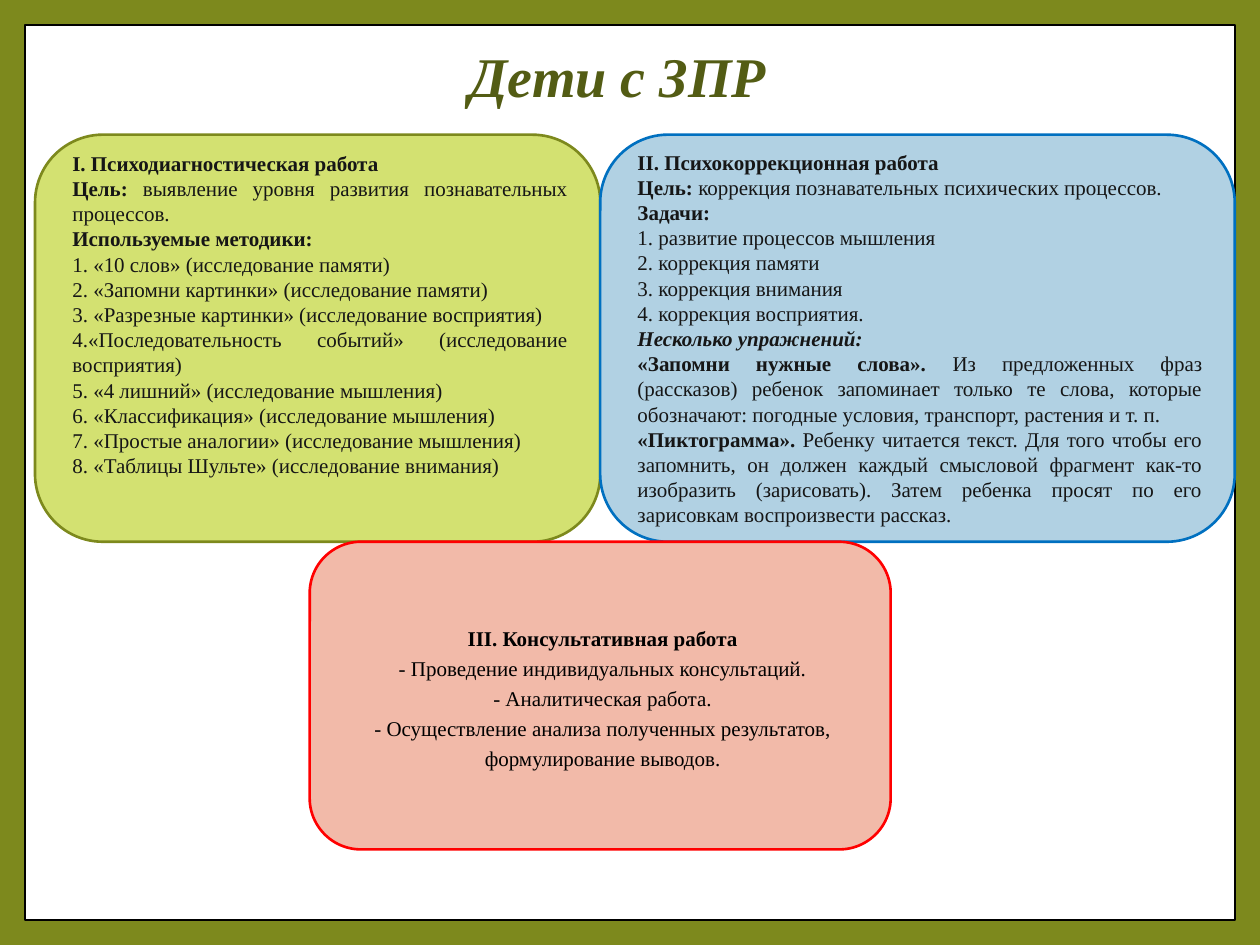
import pptx
import pptx.dml.color
import pptx.enum.shapes
import pptx.enum.text
import pptx.util

Pt = pptx.util.Pt
ALIGN = pptx.enum.text.PP_ALIGN
MIDDLE = pptx.enum.text.MSO_ANCHOR.MIDDLE
SHAPES = pptx.enum.shapes.MSO_SHAPE
BOLD = {"bold": True}
PLAIN = {"bold": False}

DIAGNOSTICS = [
    [("I. Психодиагностическая работа", BOLD)],
    [("Цель:", BOLD), (" выявление уровня развития познавательных процессов.", PLAIN)],
    [("Используемые методики:", BOLD)],
    [("1. «10 слов» (исследование памяти)", PLAIN)],
    [("2. «Запомни картинки» (исследование памяти)", PLAIN)],
    [("3. «Разрезные картинки» (исследование восприятия)", PLAIN)],
    [("4.«Последовательность событий» (исследование восприятия)", PLAIN)],
    [("5. «4 лишний» (исследование мышления)", PLAIN)],
    [("6. «Классификация» (исследование мышления)", PLAIN)],
    [("7. «Простые аналогии» (исследование мышления)", PLAIN)],
    [("8. «Таблицы Шульте» (исследование внимания)", PLAIN)],
]
CORRECTION = [
    [("II. Психокоррекционная работа", BOLD)],
    [("Цель:", BOLD), (" коррекция познавательных психических процессов.", PLAIN)],
    [("Задачи:", BOLD)],
    [("1. развитие процессов мышления", PLAIN)],
    [("2. коррекция памяти", PLAIN)],
    [("3. коррекция внимания", PLAIN)],
    [("4. коррекция восприятия.", PLAIN)],
    [("Несколько упражнений:", {"bold": True, "italic": True})],
    [("«Запомни нужные слова». ", BOLD),
     ("Из предложенных фраз (рассказов) ребенок запоминает только те слова, "
      "которые обозначают: погодные условия, транспорт, растения и т. п.", PLAIN)],
    [("«Пиктограмма».", BOLD),
     (" Ребенку читается текст. Для того чтобы его запомнить, он должен каждый "
      "смысловой фрагмент как-то изобразить (зарисовать). Затем ребенка просят "
      "по его зарисовкам воспроизвести рассказ.", PLAIN)],
]
CONSULTING = [
    [("III. Консультативная работа", BOLD)],
    [("- Проведение индивидуальных консультаций.", PLAIN)],
    [("- Аналитическая работа.", PLAIN)],
    [("- Осуществление анализа полученных результатов, формулирование выводов.", PLAIN)],
]


def color(value):
    return pptx.dml.color.RGBColor.from_string(value)


def apply(target, values):
    for name, value in values.items():
        setattr(target, name, value)


def add_span(para, text, size, ink, style):
    span = para.add_run()
    span.text = text
    apply(span.font, {"name": "Times New Roman", "size": Pt(size), **style})
    span.font.color.rgb = color(ink)


def add_panel(page, kind, box, fill, line, width):
    panel = page.shapes.add_shape(kind, *map(Pt, box))
    panel.shadow.inherit = False
    panel.fill.solid()
    panel.fill.fore_color.rgb = color(fill)
    panel.line.color.rgb = color(line)
    panel.line.width = Pt(width)
    return panel


def add_title(page, box, text):
    title = page.shapes.title
    apply(title, dict(zip(("left", "top", "width", "height"), map(Pt, box))))
    apply(title.text_frame, {"word_wrap": True, "vertical_anchor": MIDDLE})
    para = title.text_frame.paragraphs[0]
    apply(para, {"alignment": ALIGN.CENTER, "line_spacing": 0.9})
    add_span(para, text, 32, "535C14", {"bold": True, "italic": True})


def add_card(page, box, fill, line, paragraphs, ink, para_format, bottom_inset=3.6):
    card = add_panel(page, SHAPES.ROUNDED_RECTANGLE, box, fill, line, 1.5)
    frame = card.text_frame
    apply(frame, {"word_wrap": True, "vertical_anchor": MIDDLE,
                  "margin_bottom": Pt(bottom_inset)})
    for index, spans in enumerate(paragraphs):
        para = frame.add_paragraph() if index else frame.paragraphs[0]
        apply(para, para_format)
        para._p.get_or_add_pPr().set("marL", str(Pt(2.88)))
        for text, style in spans:
            add_span(para, text, 12, ink, style)


def build_page(deck):
    page = deck.slides.add_slide(deck.slide_layouts[5])
    page.background.fill.solid()
    page.background.fill.fore_color.rgb = color("7D891D")

    border = 14.4
    sheet = add_panel(page, SHAPES.RECTANGLE,
                      (border, border, 720 - 2 * border, 540 - 2 * border),
                      "FFFFFF", "000000", 1)
    page.shapes.title.element.addprevious(sheet.element)
    add_title(page, (65.5, 13.7, 583.2, 63.4), "Дети с ЗПР ")

    left, middle, right = 20, 343, 720 - border
    top, height = 77, 232.6
    justified = {"alignment": ALIGN.JUSTIFY}
    centred = {"alignment": ALIGN.CENTER, "line_spacing": 1.2}
    add_card(page, (left, top, middle - left, height), "D3E171", "7D891D",
             DIAGNOSTICS, "161616", justified, bottom_inset=31)
    add_card(page, (middle, top, right - middle, height), "B1D1E3", "0070C0",
             CORRECTION, "161616", justified)
    add_card(page, (177, top + height, 332, 175.8), "F2BAA9", "FF0000",
             CONSULTING, "000000", centred)


def main():
    deck = pptx.Presentation()
    apply(deck, {"slide_width": Pt(720), "slide_height": Pt(540)})
    build_page(deck)
    deck.save("out.pptx")


if __name__ == "__main__":
    main()
